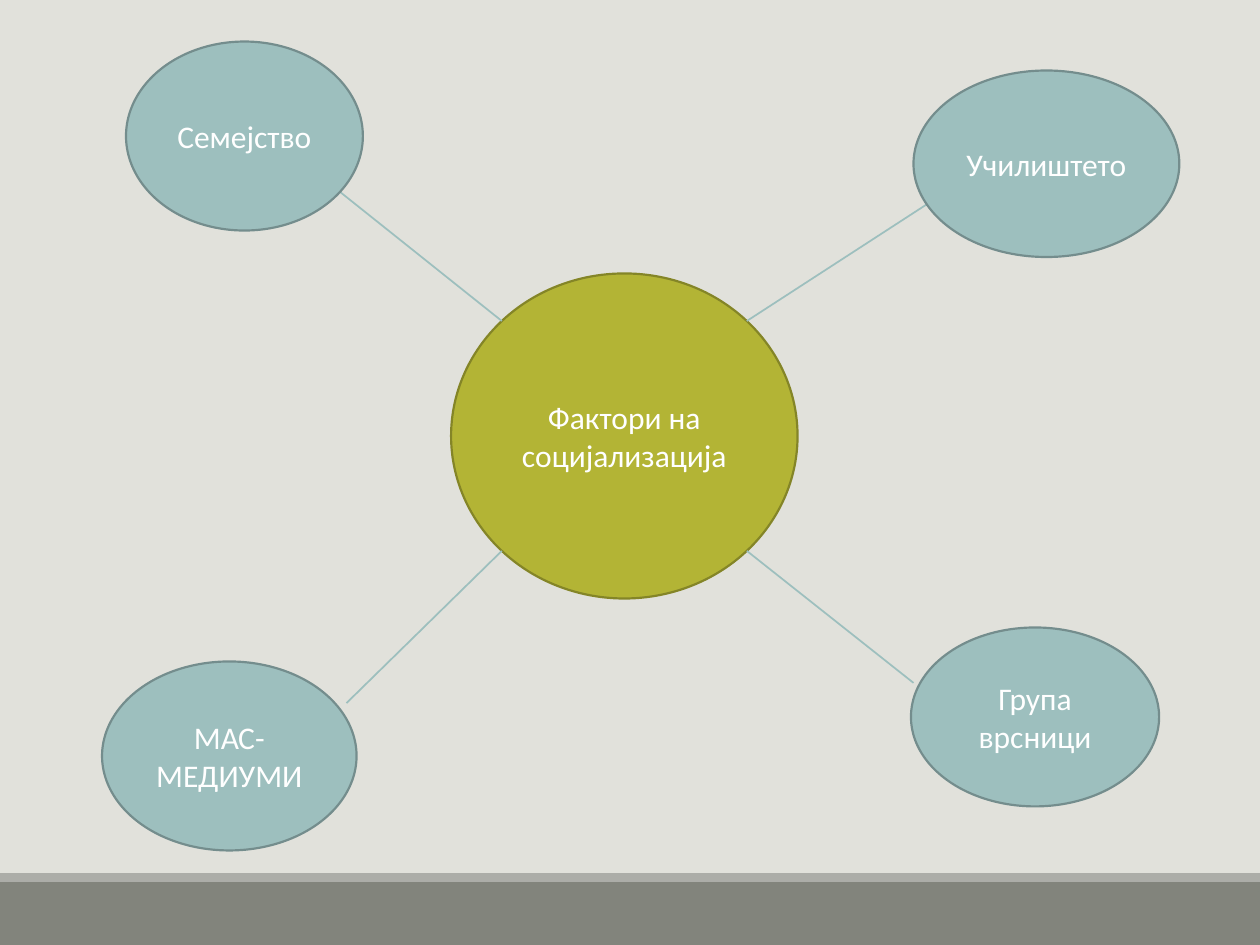
import math
from lxml import etree
from pptx import Presentation
from pptx import util as u
from pptx.dml.color import RGBColor
from pptx.enum import shapes, text
from pptx.oxml import ns

BACKGROUND = RGBColor(0xE1, 0xE1, 0xDB)
FOOTER_DARK = RGBColor(0x82, 0x84, 0x7C)
FOOTER_LIGHT = RGBColor(0xAC, 0xAD, 0xA8)
OLIVE = RGBColor(0xB3, 0xB4, 0x35)
OLIVE_EDGE = RGBColor(0x84, 0x85, 0x27)
TEAL = RGBColor(0x9D, 0xBF, 0xBE)
TEAL_EDGE = RGBColor(0x74, 0x8D, 0x8D)
WHITE = RGBColor(0xFF, 0xFF, 0xFF)

LABEL_FONT = {"name": "Calibri", "size": u.Pt(18)}

HUB_BOX = (3.58, 2.17, 2.75, 2.58)
# label, ellipse box, outer end of its spoke, side of the hub (x, y)
FACTORS = [
    ("Група врсници", (7.23, 4.98, 1.97, 1.42), (7.25, 5.42), (1, 1)),
    ("МАС-МЕДИУМИ", (0.81, 5.25, 2.02, 1.5), (2.75, 5.58), (-1, 1)),
    ("Училиштето", (7.25, 0.56, 2.11, 1.48), (7.42, 1.58), (1, -1)),
    ("Семејство", (1, 0.33, 1.88, 1.5), (2.67, 1.5), (-1, -1)),
]


def hub_corner(side):
    """Point on the hub's outline at 45 degrees towards the given side."""
    left, top, width, height = HUB_BOX
    reach = math.sqrt(0.5)
    return (left + width / 2 * (1 + side[0] * reach),
            top + height / 2 * (1 + side[1] * reach))


class Diagram:
    def __init__(self, slide, font):
        self.slide = slide
        self.font = font

    def background(self, color):
        fill = self.slide.background.fill
        fill.solid()
        fill.fore_color.rgb = color

    def _filled(self, kind, box, color):
        shape = self.slide.shapes.add_shape(kind, *map(u.Inches, box))
        shape.shadow.inherit = False
        shape.fill.solid()
        shape.fill.fore_color.rgb = color
        return shape

    def band(self, box, color):
        band = self._filled(shapes.MSO_SHAPE.RECTANGLE, box, color)
        band.line.fill.background()

    def bubble(self, label, box, color, edge):
        bubble = self._filled(shapes.MSO_SHAPE.OVAL, box, color)
        bubble.line.color.rgb = edge
        bubble.line.width = u.Pt(1.25)
        frame = bubble.text_frame
        frame.word_wrap = True
        frame.vertical_anchor = text.MSO_ANCHOR.MIDDLE
        paragraph = frame.paragraphs[0]
        paragraph.alignment = text.PP_ALIGN.CENTER
        run = paragraph.add_run()
        run.text = label
        for attribute, value in self.font.items():
            setattr(run.font, attribute, value)
        run.font.color.rgb = WHITE

    def spoke(self, start, end):
        spoke = self.slide.shapes.add_connector(
            shapes.MSO_CONNECTOR.STRAIGHT, *map(u.Inches, start + end))
        spoke.line.color.rgb = TEAL
        spoke.line.width = u.Pt(1)
        etree.SubElement(spoke._element.spPr, ns.qn("a:effectLst"))


def main():
    deck = Presentation()
    deck.slide_width, deck.slide_height = u.Inches(10), u.Inches(7.5)
    diagram = Diagram(deck.slides.add_slide(deck.slide_layouts[6]), LABEL_FONT)

    diagram.background(BACKGROUND)
    diagram.band((0, 7, 10, 0.5), FOOTER_DARK)
    diagram.band((0, 6.93, 10, 0.07), FOOTER_LIGHT)
    diagram.bubble("Фактори на социјализација", HUB_BOX, OLIVE, OLIVE_EDGE)
    for _, _, outer_end, side in FACTORS:
        diagram.spoke(hub_corner(side), outer_end)
    for label, box, _, _ in FACTORS:
        diagram.bubble(label, box, TEAL, TEAL_EDGE)

    deck.save("out.pptx")


if __name__ == "__main__":
    main()
